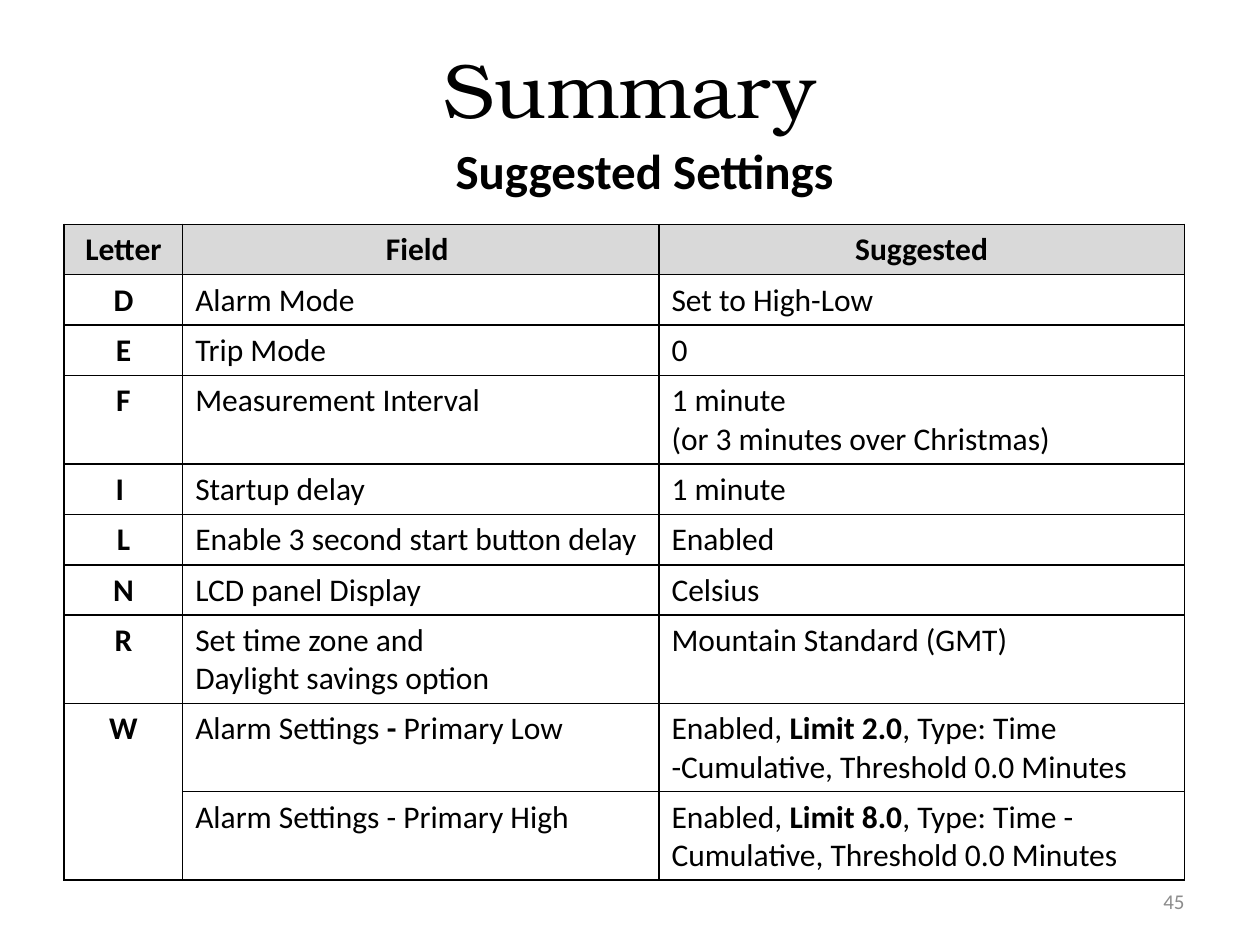
from lxml import etree
from pptx import Presentation
from pptx.dml.color import RGBColor
from pptx.enum.text import MSO_ANCHOR, PP_ALIGN
from pptx.oxml.ns import qn
from pptx.util import Inches, Pt

LEFT, CENTER, RIGHT = PP_ALIGN.LEFT, PP_ALIGN.CENTER, PP_ALIGN.RIGHT
TOP, MIDDLE = MSO_ANCHOR.TOP, MSO_ANCHOR.MIDDLE
TITLE_ONLY = 5

# Newlines part paragraphs; text between ** marks is bold
ROWS = [
    ("**Letter**", "**Field **", "**Suggested**"),
    ("**D**", "Alarm Mode", "Set to High-Low"),
    ("**E**", "Trip Mode", "0"),
    ("**F**", "Measurement Interval", "1 minute\n(or 3 minutes over Christmas)"),
    ("**I **", "Startup delay", "1 minute"),
    ("**L**", "Enable 3 second start button delay", "Enabled"),
    ("**N**", "LCD panel Display", "Celsius"),
    ("**R**", "Set time zone and \nDaylight savings option", "Mountain Standard (GMT)"),
    ("**W**", "Alarm Settings **- **Primary Low",
     "Enabled, **Limit 2.0**, Type: Time -Cumulative, Threshold 0.0 Minutes"),
    ("", "Alarm Settings - Primary High",
     "Enabled, **Limit 8.0**, Type: Time - Cumulative, Threshold 0.0 Minutes"),
]
COL_WIDTHS = (0.94, 3.78, 4.17)
ROW_HEIGHT = 0.4
LETTER_W_ROW = 8


def color(hex_string):
    return RGBColor.from_string(hex_string)


class SlideBuilder:
    """Holds the style and the current slide."""
    font = "Calibri"
    ink = "000000"
    header_fill = "D9D9D9"
    border_pt = 1

    def __init__(self, prs):
        self.s = prs.slides.add_slide(prs.slide_layouts[TITLE_ONLY])

    def add_text(self, tf, text, size, align=LEFT, font=None, ink=None):
        style = {"name": font or self.font, "size": Pt(size)}
        for i, line in enumerate(text.split("\n")):
            p = tf.paragraphs[0] if i == 0 else tf.add_paragraph()
            p.alignment = align
            for j, part in enumerate(line.split("**")):
                if not part:
                    continue
                r = p.add_run()
                r.text = part
                for name, value in {**style, "bold": j % 2 == 1}.items():
                    setattr(r.font, name, value)
                r.font.color.rgb = color(ink or self.ink)

    def title(self, text, x, y, w, h, size, font):
        sp = self.s.shapes.title
        box = {"left": x, "top": y, "width": w, "height": h}
        for name, value in box.items():
            setattr(sp, name, Inches(value))
        sp.text_frame.vertical_anchor = MIDDLE
        self.add_text(sp.text_frame, text, size, CENTER, font)

    def text_box(self, text, x, y, w, h, size, align, anchor=TOP, ink=None):
        sp = self.s.shapes.add_textbox(Inches(x), Inches(y), Inches(w), Inches(h))
        tf = sp.text_frame
        tf.word_wrap = True
        tf.vertical_anchor = anchor
        self.add_text(tf, text, size, align, ink=ink)

    def border(self, cell):
        tc_pr = cell._tc.get_or_add_tcPr()
        for side in ("lnL", "lnR", "lnT", "lnB"):
            ln = etree.SubElement(tc_pr, qn(f"a:{side}"), w=str(Pt(self.border_pt)))
            fill = etree.SubElement(ln, qn("a:solidFill"))
            etree.SubElement(fill, qn("a:srgbClr"), val=self.ink)

    def table(self, rows, x, y, widths, row_height, size):
        frame = self.s.shapes.add_table(
            len(rows), len(widths), Inches(x), Inches(y),
            Inches(sum(widths)), Inches(row_height * len(rows)))
        table = frame.table
        for column, width in zip(table.columns, widths):
            column.width = Inches(width)
        for i, row in enumerate(rows):
            table.rows[i].height = Inches(row_height)
            for j, text in enumerate(row):
                cell = table.cell(i, j)
                self.border(cell)
                if i == 0:
                    cell.fill.solid()
                    cell.fill.fore_color.rgb = color(self.header_fill)
                else:
                    cell.fill.background()
                align = CENTER if i == 0 or j == 0 else LEFT
                self.add_text(cell.text_frame, text, size, align)
        return table


def main():
    prs = Presentation()
    prs.slide_width, prs.slide_height = Inches(10), Inches(7.5)
    slide = SlideBuilder(prs)

    # Headings
    slide.title("Summary", 0.5, 0.05, 9, 1.29, 44, "TeX Gyre Bonum")
    slide.text_box("**Suggested Settings**", 0.51, 1.07, 9.21, 0.57, 28, CENTER)

    # Settings table, with letter W spanning its two rows
    table = slide.table(ROWS, 0.51, 1.78, COL_WIDTHS, ROW_HEIGHT, 18)
    table.cell(LETTER_W_ROW, 0).merge(table.cell(LETTER_W_ROW + 1, 0))

    # Page number
    slide.text_box("45", 7.17, 6.95, 2.33, 0.4, 12, RIGHT, MIDDLE, "8C8C8C")

    prs.save("out.pptx")


if __name__ == "__main__":
    main()
